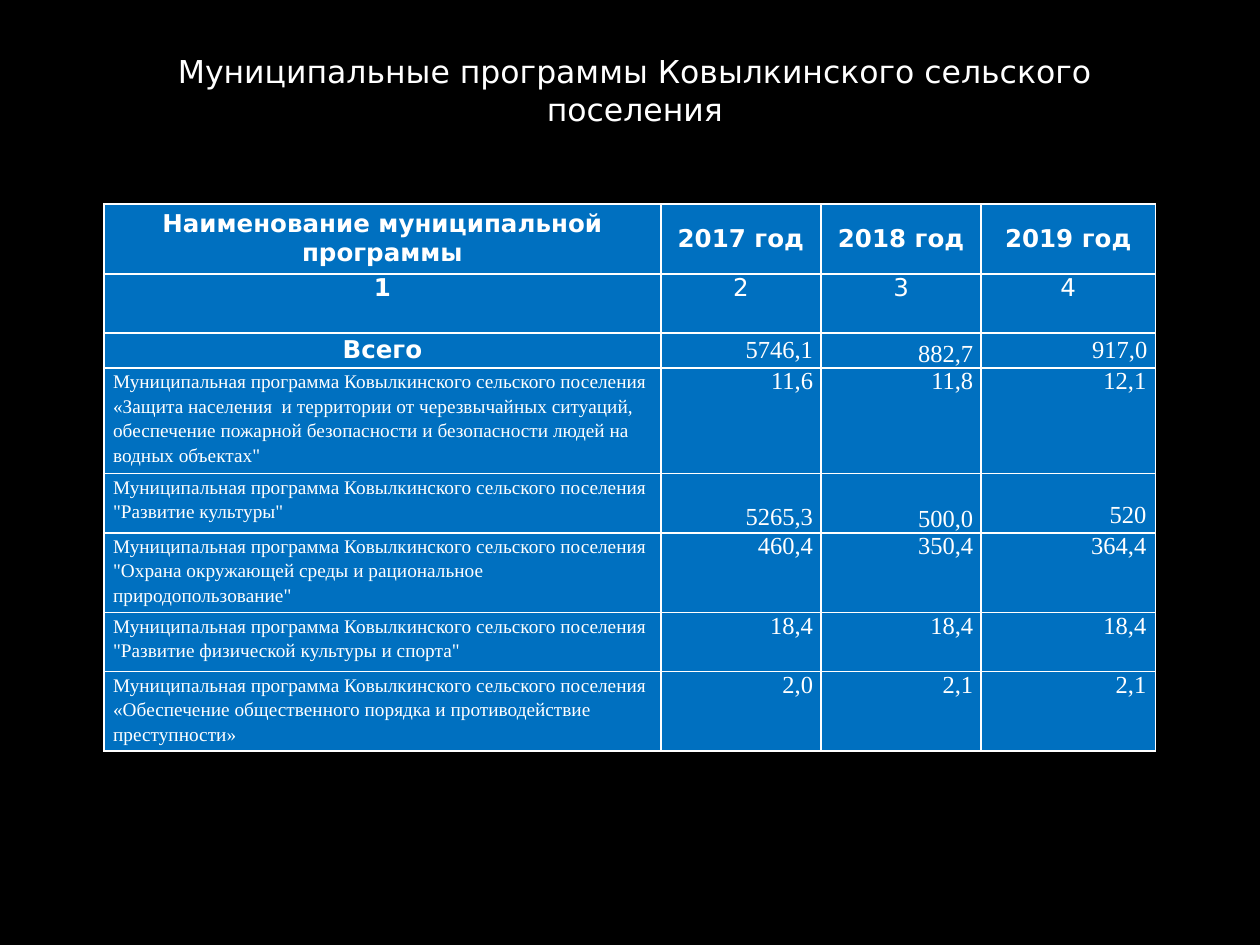
from lxml import etree
from pptx import Presentation
from pptx.dml.color import RGBColor
from pptx.enum import text
from pptx.oxml import ns
from pptx.util import Cm, Pt

WHITE = RGBColor(0xFF, 0xFF, 0xFF)
BLACK = RGBColor(0, 0, 0)
BLUE = RGBColor(0x00, 0x70, 0xC0)
SANS = "DejaVu Sans"
SERIF = "Times New Roman"
TOP = text.MSO_ANCHOR.TOP
MIDDLE = text.MSO_ANCHOR.MIDDLE
BOTTOM = text.MSO_ANCHOR.BOTTOM
CENTER = text.PP_ALIGN.CENTER
LEFT = text.PP_ALIGN.LEFT
RIGHT = text.PP_ALIGN.RIGHT

TITLE = "Муниципальные программы Ковылкинского сельского поселения"
PREFIX = "Муниципальная программа Ковылкинского сельского поселения "
HEADERS = [
    ["Наименование муниципальной программы", "2017 год", "2018 год", "2019 год"],
    ["1", "2", "3", "4"],
]
TOTALS = ["Всего", "5746,1", "882,7", "917,0"]
PROGRAMS = [
    ["«Защита населения  и территории от черезвычайных ситуаций, обеспечение "
     "пожарной безопасности и безопасности людей на водных объектах\"",
     "11,6", "11,8", "12,1"],
    ["\"Развитие культуры\"", "5265,3", "500,0", "520"],
    ["\"Охрана окружающей среды и рациональное природопользование\"",
     "460,4", "350,4", "364,4"],
    ["\"Развитие физической культуры и спорта\"", "18,4", "18,4", "18,4"],
    ["«Обеспечение общественного порядка и противодействие преступности»",
     "2,0", "2,1", "2,1"],
]
COLUMN_WIDTHS = [11.22, 3.23, 3.23, 3.51]
ROW_HEIGHTS = [1.41, 1.19, 0.71, 2.13, 1.19, 1.61, 1.19, 1.6]
CULTURE_ROW = 4
LINE_DROP = Cm(0.57)  # one line of 14 pt text


def format_text(frame, align, font, size, bold=False):
    paragraph = frame.paragraphs[0]
    paragraph.alignment = align
    for span in paragraph.runs:
        span.font.name = font
        span.font.size = Pt(size)
        span.font.bold = bold
        span.font.color.rgb = WHITE
    return paragraph


def add_borders(cell):
    properties = cell._tc.get_or_add_tcPr()
    for side in ("a:lnL", "a:lnR", "a:lnT", "a:lnB"):
        line = etree.SubElement(properties, ns.qn(side), w=str(Pt(1)))
        fill = etree.SubElement(line, ns.qn("a:solidFill"))
        etree.SubElement(fill, ns.qn("a:srgbClr"), val=str(WHITE))


def fill_cell(cell, words, align, font, size=14, bold=False, anchor=TOP, side=0.16):
    add_borders(cell)
    cell.fill.solid()
    cell.fill.fore_color.rgb = BLUE
    cell.margin_left = cell.margin_right = Cm(side)
    cell.margin_top = cell.margin_bottom = Cm(0)
    cell.vertical_anchor = anchor
    cell.text_frame.text = words
    return format_text(cell.text_frame, align, font, size, bold)


def add_title(page):
    box = page.shapes.add_textbox(Cm(1.7), Cm(0.91), Cm(22.2), Cm(1.8))
    frame = box.text_frame
    frame.word_wrap = True
    frame.vertical_anchor = MIDDLE
    frame.text = TITLE
    format_text(frame, CENTER, SANS, 18)


def add_programs_table(page):
    table = page.shapes.add_table(
        len(ROW_HEIGHTS), len(COLUMN_WIDTHS), Cm(2.1), Cm(4.11),
        Cm(sum(COLUMN_WIDTHS)), Cm(sum(ROW_HEIGHTS))).table
    table.first_row = table.horz_banding = False
    for column, width in zip(table.columns, COLUMN_WIDTHS):
        column.width = Cm(width)
    for row, height in zip(table.rows, ROW_HEIGHTS):
        row.height = Cm(height)

    # Header and column numbers
    for row, words in enumerate(HEADERS):
        for column, word in enumerate(words):
            fill_cell(table.cell(row, column), word, CENTER, SANS,
                      bold=row == 0 or column == 0,
                      anchor=MIDDLE if row == 0 else TOP)

    # Totals
    fill_cell(table.cell(2, 0), TOTALS[0], CENTER, SANS, bold=True, anchor=MIDDLE)
    for column, anchor in enumerate((MIDDLE, BOTTOM, MIDDLE), 1):
        fill_cell(table.cell(2, column), TOTALS[column], RIGHT, SERIF, anchor=anchor)

    # Programs
    for row, (name, *amounts) in enumerate(PROGRAMS, 3):
        paragraph = fill_cell(table.cell(row, 0), PREFIX + name, LEFT, SERIF, 11, side=0.18)
        paragraph.line_spacing = 1.15
        anchors = (MIDDLE, BOTTOM, TOP) if row == CULTURE_ROW else (TOP,) * 3
        for column, (amount, anchor) in enumerate(zip(amounts, anchors), 1):
            fill_cell(table.cell(row, column), amount, RIGHT, SERIF,
                      anchor=anchor, side=0.18 if column == 3 else 0.16)

    # Culture amounts sit one line lower
    for column in (1, 3):
        table.cell(CULTURE_ROW, column).margin_top = LINE_DROP


def main():
    deck = Presentation()
    deck.slide_width, deck.slide_height = Cm(25.4), Cm(19.05)
    page = deck.slides.add_slide(deck.slide_layouts[6])
    page.background.fill.solid()
    page.background.fill.fore_color.rgb = BLACK
    add_programs_table(page)
    add_title(page)
    deck.save("out.pptx")


if __name__ == "__main__":
    main()
